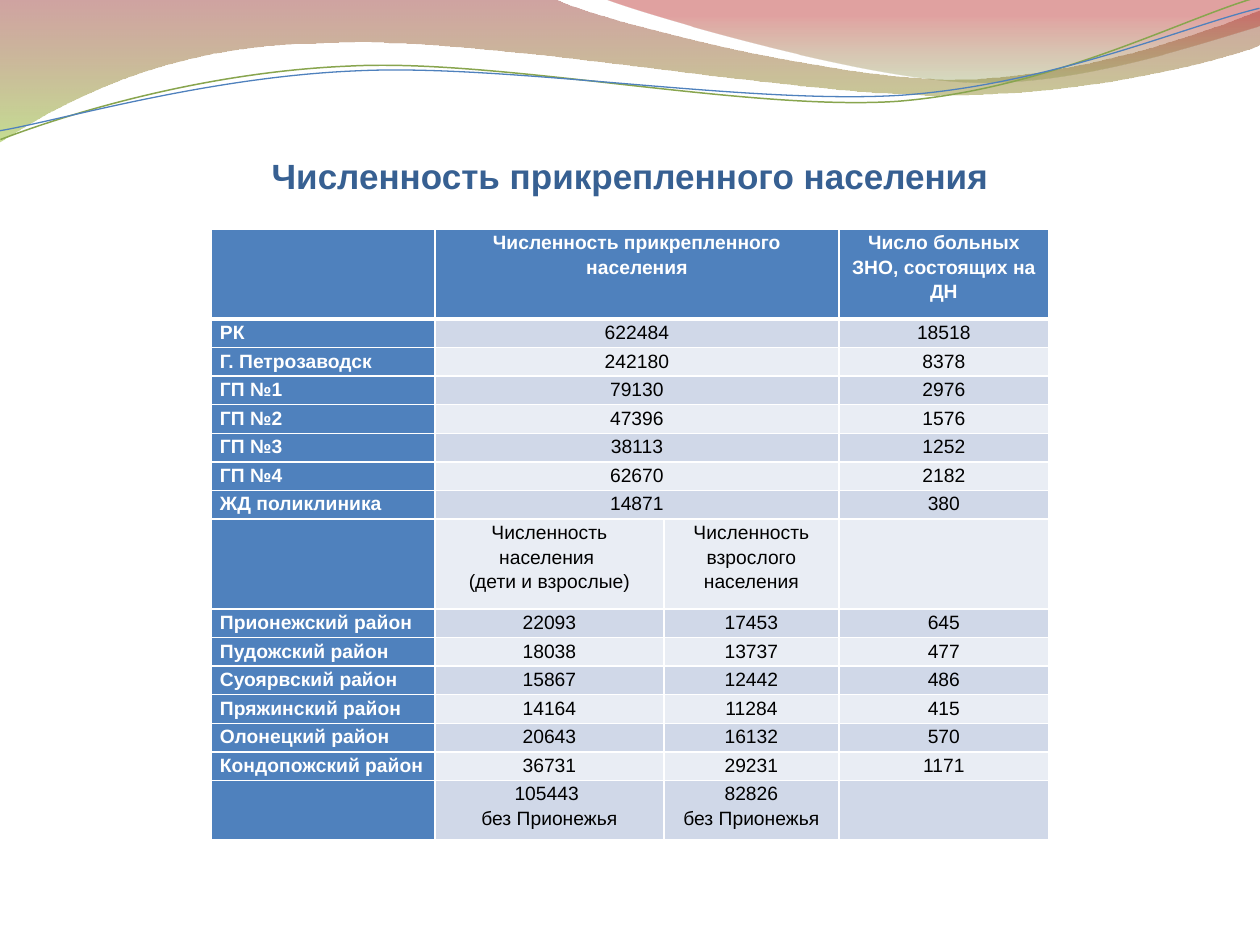
import pptx
import pptx.util
import pptx.dml.color
import pptx.enum.text
import pptx.oxml
import pptx.oxml.ns
from lxml import etree

# Content: rows with three values span the two middle columns
HEADING = "Численность прикрепленного населения"
POPULATION = [
    ("", "Численность прикрепленного населения", "Число больных ЗНО, состоящих на ДН"),
    ("РК", "622484", "18518"),
    ("Г. Петрозаводск", "242180", "8378"),
    ("ГП №1", "79130", "2976"),
    ("ГП №2", "47396", "1576"),
    ("ГП №3", "38113", "1252"),
    ("ГП №4", "62670", "2182"),
    ("ЖД поликлиника", "14871", "380"),
    ("", "Численность\nнаселения \n(дети и взрослые)", "Численность взрослого населения", ""),
    ("Прионежский район", "22093", "17453", "645"),
    ("Пудожский район", "18038", "13737", "477"),
    ("Суоярвский район", "15867", "12442", "486"),
    ("Пряжинский район", "14164", "11284", "415"),
    ("Олонецкий район", "20643", "16132", "570"),
    ("Кондопожский район", "36731", "29231", "1171"),
    ("", "105443 \nбез Прионежья", "82826\nбез Прионежья", ""),
]
COLORS = {
    "heading": "376092", "accent": "4F81BD", "band_dark": "D0D8E8", "band_light": "E9EDF4",
    "white": "FFFFFF", "black": "000000", "green_line": "88A54E",
    "wine": "973330", "lime": "95C238", "olive": "769537", "red": "BE3330",
}

# Waves: start point, then one point for a line or three for a curve, in px
WAVES = [
    {"start": (0, -1),
     "steps": [[(554, -1)], [(600, 21), (835, 79), (955, 79)],
               [(1075, 79), (1207, 32), (1260, 11)], [(1261, 45)],
               [(1239, 55), (1096, 96), (940, 95)], [(784, 95), (481, 35), (324, 43)],
               [(163, 44), (58, 105), (-1, 142)]],
     "stops": [(0, "wine", 45), (1, "lime", 55)], "angle": 270},
    {"start": (604, -1),
     "steps": [[(641, 14), (859, 78), (969, 82)], [(1077, 87), (1211, 40), (1260, 26)],
               [(1260, 0)]],
     "stops": [(0, "olive", 30), (0.8, "red", 45)], "angle": 90},
    {"start": (-2, 110),
     "steps": [[(58, 90), (199, 52), (350, 53)], [(499, 52), (745, 117), (896, 114)],
               [(1049, 109), (1184, 45), (1260, 27)]],
     "line": ("green_line", 0.85)},
    {"start": (-2, 101),
     "steps": [[(57, 94), (207, 57), (358, 58)], [(509, 58), (750, 111), (902, 108)],
               [(1052, 104), (1188, 52), (1262, 38)]],
     "line": ("accent", 0.75)},
]
LINE_ROTATION = 357.3

# Layout in px
PX = 914400 / 126
SLIDE = (1260, 945)
HEADING_BOX = {"left": 63, "top": 78, "width": 1134, "height": 195}
COLUMNS = [224, 229, 175, 210]
TABLE_TOP, TABLE_HEIGHT = 229, 611
TABLE_LEFT = (SLIDE[0] - sum(COLUMNS)) / 2
TALL_ROWS = {0: 90, 8: 90, 15: 59}
CELL_MARGINS = {"margin_left": 9, "margin_right": 9, "margin_top": 0, "margin_bottom": 0}
ALIGN = pptx.enum.text.PP_ALIGN
qn = pptx.oxml.ns.qn


def emu(px):
    return pptx.util.Emu(round(px * PX))


def rgb(name):
    return pptx.dml.color.RGBColor.from_string(COLORS[name])


def set_font(font, size, color, bold):
    for key, value in {"name": "Arial", "size": pptx.util.Pt(size), "bold": bold}.items():
        setattr(font, key, value)
    font.color.rgb = rgb(color)


def bend(shape, steps):
    """Join each run of three straight segments into one Bezier curve."""
    segments = iter(list(shape.element.iter(qn("a:lnTo"))))
    for step in steps:
        parts = [next(segments) for _ in step]
        if len(parts) == 3:
            parts[0].tag = qn("a:cubicBezTo")
            for part in parts[1:]:
                parts[0].append(part[0])
                part.getparent().remove(part)


def add_wave(shapes, wave):
    builder = shapes.build_freeform(*wave["start"], scale=PX)
    points = [point for step in wave["steps"] for point in step]
    builder.add_line_segments(points, close="stops" in wave)
    shape = builder.convert_to_shape()
    bend(shape, wave["steps"])
    shape.shadow.inherit = False
    if "line" in wave:
        color, width = wave["line"]
        shape.rotation = LINE_ROTATION
        shape.fill.background()
        shape.line.color.rgb = rgb(color)
        shape.line.width = pptx.util.Pt(width)
        return
    shape.line.fill.background()
    shape.fill.gradient()
    shape.fill.gradient_angle = wave["angle"]
    for stop, (position, color, _) in zip(shape.fill.gradient_stops, wave["stops"]):
        stop.position = position
        stop.color.rgb = rgb(color)
    tints = shape.element.spPr.findall(".//" + qn("a:srgbClr"))
    for tint, (_, _, opacity) in zip(tints, wave["stops"]):
        etree.SubElement(tint, qn("a:alpha"), val=str(opacity * 1000))


def add_borders(cell, bottom_width):
    widths = {"L": 1, "R": 1, "T": 1, "B": bottom_width}
    for place, (side, width) in enumerate(widths.items()):
        cell._tc.get_or_add_tcPr().insert(place, pptx.oxml.parse_xml(
            f'<a:ln{side} {pptx.oxml.ns.nsdecls("a")} w="{width * 12700}"><a:solidFill>'
            f'<a:srgbClr val="{COLORS["white"]}"/></a:solidFill></a:ln{side}>'))


def fill_cell(cell, text, row, column):
    strong = row == 0 or column == 0
    band = "band_dark" if row % 2 else "band_light"
    for key, value in CELL_MARGINS.items():
        setattr(cell, key, emu(value))
    cell.fill.solid()
    cell.fill.fore_color.rgb = rgb("accent" if strong else band)
    add_borders(cell, 1 if row else 3)
    if not text:
        return
    cell.text = text
    for paragraph in cell.text_frame.paragraphs:
        paragraph.alignment = ALIGN.CENTER if column else ALIGN.LEFT
        paragraph.line_spacing = 1.15
        for run in paragraph.runs:
            set_font(run.font, 11, "white" if strong else "black", strong)


def add_population_table(shapes):
    population = shapes.add_table(
        len(POPULATION), len(COLUMNS), emu(TABLE_LEFT), emu(TABLE_TOP),
        emu(sum(COLUMNS)), emu(TABLE_HEIGHT)).table
    for column, width in zip(population.columns, COLUMNS):
        column.width = emu(width)
    plain_height = (TABLE_HEIGHT - sum(TALL_ROWS.values())) / (len(POPULATION) - len(TALL_ROWS))
    for r, values in enumerate(POPULATION):
        population.rows[r].height = emu(TALL_ROWS.get(r, plain_height))
        spans = len(values) < len(COLUMNS)
        texts = (*values[:2], "", values[2]) if spans else values
        for c, text in enumerate(texts):
            fill_cell(population.cell(r, c), text, r, c)
        if spans:
            population.cell(r, 1).merge(population.cell(r, 2))


def main():
    deck = pptx.Presentation()
    deck.slide_width, deck.slide_height = map(emu, SLIDE)
    slide = deck.slides.add_slide(deck.slide_layouts[5])

    # Decorative waves, behind the heading
    for wave in WAVES:
        add_wave(slide.shapes, wave)

    # Heading
    heading = slide.shapes.title
    slide.shapes.element.append(heading.element)
    for key, value in HEADING_BOX.items():
        setattr(heading, key, emu(value))
    frame = heading.text_frame
    frame.text = HEADING
    frame.vertical_anchor = pptx.enum.text.MSO_ANCHOR.MIDDLE
    for side in ("left", "right", "top", "bottom"):
        setattr(frame, f"margin_{side}", 0)
    frame.paragraphs[0].alignment = ALIGN.CENTER
    set_font(frame.paragraphs[0].runs[0].font, 20, "heading", True)

    # Population table
    add_population_table(slide.shapes)
    deck.save("out.pptx")


if __name__ == "__main__":
    main()
